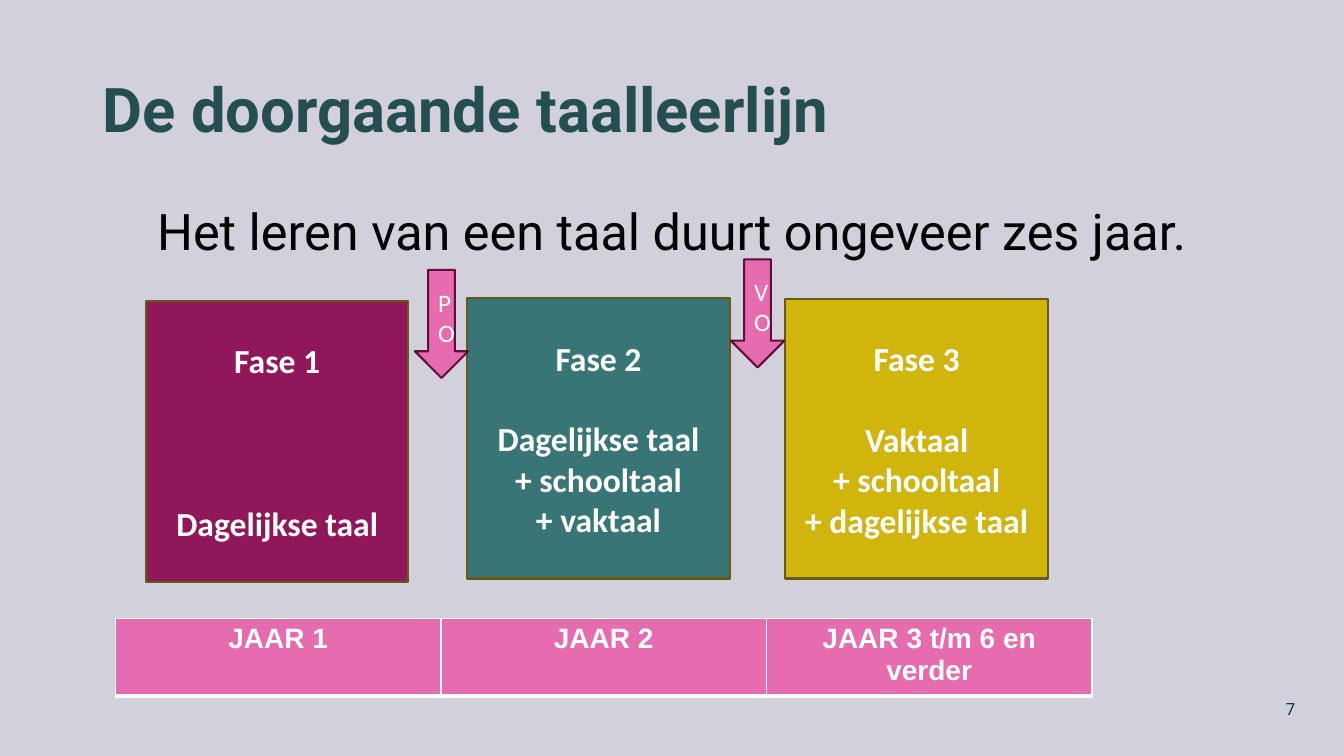
import pptx
import pptx.util
import pptx.dml.color
import pptx.enum.shapes
import pptx.enum.text
import pptx.oxml.ns
import lxml.etree

PX = 9525
COLORS = {
    "background": "D2D1DB", "title": "254E4F", "body": "000000", "number": "003C46",
    "white": "FFFFFF", "phase1": "90175A", "phase2": "387576", "phase3": "D0B50C",
    "phase_line": "665B15", "pink": "E66BAF", "arrow_line": "600F3C",
}
SHAPES = pptx.enum.shapes.MSO_SHAPE
ALIGN = pptx.enum.text.PP_ALIGN
MIDDLE = pptx.enum.text.MSO_ANCHOR.MIDDLE


def px(*lengths):
    """Turn pixel lengths into EMU."""
    return [pptx.util.Emu(n * PX) for n in lengths]


def rgb(name):
    """Look up a named colour."""
    return pptx.dml.color.RGBColor.from_string(COLORS[name])


def add_text(p, text, font, size, color, bold=False, align=ALIGN.CENTER):
    """Add one formatted run to a paragraph."""
    p.alignment = align
    r = p.add_run()
    r.text = text
    r.font.name = font
    r.font.size = pptx.util.Pt(size)
    r.font.bold = bold
    r.font.color.rgb = rgb(color)


def place(sp, box):
    """Move a placeholder to a box and return its text frame."""
    sp.left, sp.top, sp.width, sp.height = px(*box)
    tf = sp.text_frame
    tf.word_wrap = True
    tf.auto_size = pptx.enum.text.MSO_AUTO_SIZE.NONE
    return tf


def fill_title(s, box, text):
    """Fill the title placeholder."""
    tf = place(s.shapes.title, box)
    tf.vertical_anchor = MIDDLE
    p = tf.paragraphs[0]
    p.line_spacing = 0.9
    add_text(p, text, "Roboto", 44, "title", True, ALIGN.LEFT)


def fill_body(s, box, text):
    """Fill the body placeholder with one indented line without a bullet."""
    p = place(s.placeholders[1], box).paragraphs[0]
    pPr = p._p.get_or_add_pPr()
    pPr.set("marL", str(96 * PX))
    pPr.set("indent", "0")
    lxml.etree.SubElement(pPr, pptx.oxml.ns.qn("a:buNone"))
    p.line_spacing = 0.9
    p.space_before = pptx.util.Pt(0)
    add_text(p, text, "Roboto", 36, "body", align=ALIGN.LEFT)


def add_number(s, box, text):
    """Add the page number."""
    tf = s.shapes.add_textbox(*px(*box)).text_frame
    tf.word_wrap = True
    tf.vertical_anchor = MIDDLE
    add_text(tf.paragraphs[0], text, "Roboto", 12, "number", align=ALIGN.RIGHT)


def add_block(s, kind, box, fill, line):
    """Add a filled, outlined shape and return its text frame."""
    sp = s.shapes.add_shape(kind, *px(*box))
    sp.shadow.inherit = False
    sp.fill.solid()
    sp.fill.fore_color.rgb = rgb(fill)
    sp.line.color.rgb = rgb(line)
    sp.line.width = pptx.util.Pt(1.5)
    tf = sp.text_frame
    tf.word_wrap = True
    tf.vertical_anchor = MIDDLE
    return tf


def add_phase(s, box, fill, heading, gap, lines):
    """Add a phase square with a heading and, after a gap, its language types."""
    tf = add_block(s, SHAPES.RECTANGLE, box, fill, "phase_line")
    add_text(tf.paragraphs[0], heading, "Calibri", 24, "white", True)
    for i, text in enumerate(lines):
        p = tf.add_paragraph()
        p.space_before = pptx.util.Pt(0 if i else gap)
        add_text(p, text, "Calibri", 24, "white", True)


def add_arrow(s, box, text):
    """Add a labelled down arrow between two phases."""
    tf = add_block(s, SHAPES.DOWN_ARROW, box, "pink", "arrow_line")
    add_text(tf.paragraphs[0], text, "Calibri", 18, "white")


def set_borders(cell):
    """Give a cell white borders with a thick bottom edge."""
    tcPr = cell._tc.get_or_add_tcPr()
    for i, (side, width) in enumerate((("L", 1), ("R", 1), ("T", 1), ("B", 3))):
        ln = lxml.etree.Element(pptx.oxml.ns.qn(f"a:ln{side}"), w=str(width * 12700))
        solid = lxml.etree.SubElement(ln, pptx.oxml.ns.qn("a:solidFill"))
        lxml.etree.SubElement(solid, pptx.oxml.ns.qn("a:srgbClr"), val=COLORS["white"])
        tcPr.insert(i, ln)


def add_years(s, box, labels):
    """Add the one-row table of school years."""
    table = s.shapes.add_table(1, len(labels), *px(*box)).table
    for cell, text in zip(table.rows[0].cells, labels):
        cell.fill.solid()
        cell.fill.fore_color.rgb = rgb("pink")
        set_borders(cell)
        add_text(cell.text_frame.paragraphs[0], text, "Arial", 20, "white", True)


def main():
    """Build the slide and save it."""
    prs = pptx.Presentation()
    prs.slide_width, prs.slide_height = px(1280, 720)
    s = prs.slides.add_slide(prs.slide_layouts[1])
    s.background.fill.solid()
    s.background.fill.fore_color.rgb = rgb("background")
    fill_title(s, (88, 38, 965, 139), "De doorgaande taalleerlijn")
    add_number(s, (955, 656, 288, 38), "7")
    fill_body(s, (44, 192, 1190, 457), "Het leren van een taal duurt ongeveer zes jaar.")
    add_phase(s, (139, 287, 250, 267), "phase1", "Fase 1", 87, ["Dagelijkse taal"])
    add_phase(s, (445, 284, 250, 267), "phase2", "Fase 2", 29,
              ["Dagelijkse taal", "+ schooltaal", "+ vaktaal"])
    add_phase(s, (748, 285, 250, 266), "phase3", "Fase 3", 29,
              ["Vaktaal", "+ schooltaal", "+ dagelijkse taal"])
    add_years(s, (110, 589, 930, 68), ["JAAR 1", "JAAR 2", "JAAR 3 t/m 6 en verder"])
    add_arrow(s, (696, 247, 51, 103), "VO")
    add_arrow(s, (395, 257, 51, 103), "PO")
    prs.save("out.pptx")


if __name__ == "__main__":
    main()
